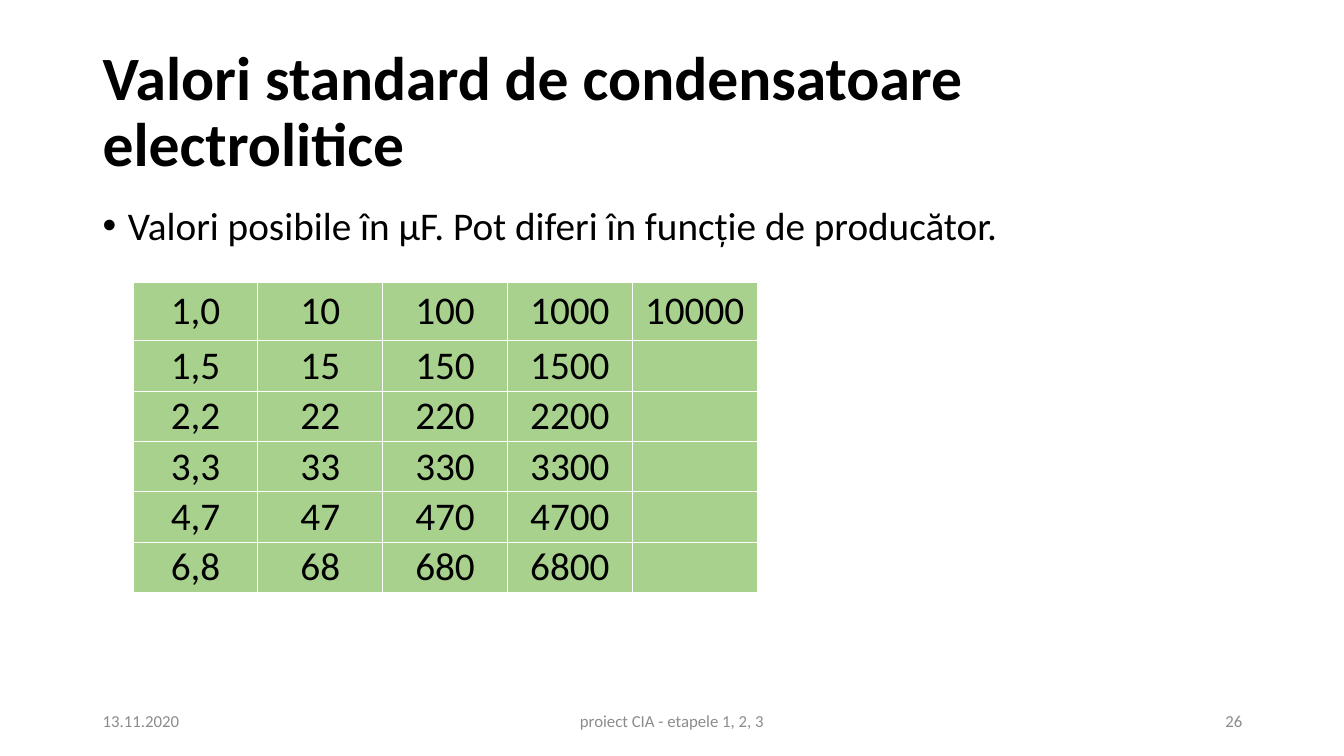
from lxml.etree import SubElement
from pptx import Presentation
from pptx.dml.color import RGBColor
from pptx.enum.text import MSO_ANCHOR as Anchor, PP_ALIGN as Align
from pptx.oxml.ns import qn
from pptx.util import Inches, Pt

COLORS = {"text": "000000", "footer": "8C8C8C", "cell": "A9D18E", "border": "FFFFFF"}
FONT = "Calibri"
WIDTH, HEIGHT = 13.33, 7.5
MARGIN = 0.92
CONTENT_WIDTH = 11.5


def format_text(frame, size, color, align=Align.LEFT, bold=False):
    paragraph = frame.paragraphs[0]
    paragraph.alignment = align
    for run in paragraph.runs:
        run.font.name = FONT
        run.font.size = Pt(size)
        run.font.bold = bold
        run.font.color.rgb = RGBColor.from_string(COLORS[color])
    return paragraph


def add_text(text, left, top, width, height, size, color="text",
             align=Align.LEFT, anchor=Anchor.MIDDLE, bold=False):
    box = slide.shapes.add_textbox(Inches(left), Inches(top), Inches(width), Inches(height))
    frame = box.text_frame
    frame.word_wrap = True
    frame.vertical_anchor = anchor
    frame.text = text
    return format_text(frame, size, color, align, bold)


presentation = Presentation()
presentation.slide_width = Inches(WIDTH)
presentation.slide_height = Inches(HEIGHT)
slide = presentation.slides.add_slide(presentation.slide_layouts[6])

# Title
title = add_text("Valori standard de condensatoare electrolitice",
                 MARGIN, 0.4, CONTENT_WIDTH, 1.45, 44, bold=True)
title.line_spacing = 0.9

# Bullet
bullet = add_text("Valori posibile în μF. Pot diferi în funcție de producător.",
                  MARGIN, 2, CONTENT_WIDTH, 4.76, 28, anchor=Anchor.TOP)
bullet.line_spacing = 0.9
bullet.space_before = Pt(10)
properties = bullet._p.get_or_add_pPr()
properties.set("marL", str(Inches(0.25)))
properties.set("indent", str(-Inches(0.25)))
SubElement(properties, qn("a:buFont"), typeface="Arial")
SubElement(properties, qn("a:buChar"), char="•")

# Footer: date, project, slide number
footer_width, project_width = 3, 4.5
for text, left, width, align in (
    ("13.11.2020", MARGIN, footer_width, Align.LEFT),
    ("proiect CIA - etapele 1, 2, 3", (WIDTH - project_width) / 2, project_width, Align.CENTER),
    ("26", MARGIN + CONTENT_WIDTH - footer_width, footer_width, Align.RIGHT),
):
    add_text(text, left, 6.95, width, 0.4, 12, "footer", align)

# Capacitor values: one row per base value, one column per decade
values = [
    ["1,0", "10", "100", "1000", "10000"],
    ["1,5", "15", "150", "1500", ""],
    ["2,2", "22", "220", "2200", ""],
    ["3,3", "33", "330", "3300", ""],
    ["4,7", "47", "470", "4700", ""],
    ["6,8", "68", "680", "6800", ""],
]
row_heights = [0.58] + [0.5] * (len(values) - 1)
table_width = 6.19
table = slide.shapes.add_table(len(values), len(values[0]), Inches(1.32), Inches(2.8),
                               Inches(table_width), Inches(sum(row_heights))).table
for column in table.columns:
    column.width = Inches(table_width / len(values[0]))

for row, row_height, row_values in zip(table.rows, row_heights, values):
    row.height = Inches(row_height)
    for cell, value in zip(row.cells, row_values):
        cell.margin_left = cell.margin_right = Inches(0.01)
        cell.margin_top = cell.margin_bottom = Inches(0.01)
        cell.vertical_anchor = Anchor.MIDDLE
        for side in ("a:lnL", "a:lnR", "a:lnT", "a:lnB"):
            line = SubElement(cell._tc.get_or_add_tcPr(), qn(side), w=str(Pt(1)))
            line_fill = SubElement(line, qn("a:solidFill"))
            SubElement(line_fill, qn("a:srgbClr"), val=COLORS["border"])
        cell.fill.solid()
        cell.fill.fore_color.rgb = RGBColor.from_string(COLORS["cell"])
        if value:
            cell.text_frame.text = value
            format_text(cell.text_frame, 28, "text", Align.CENTER)

presentation.save("out.pptx")
